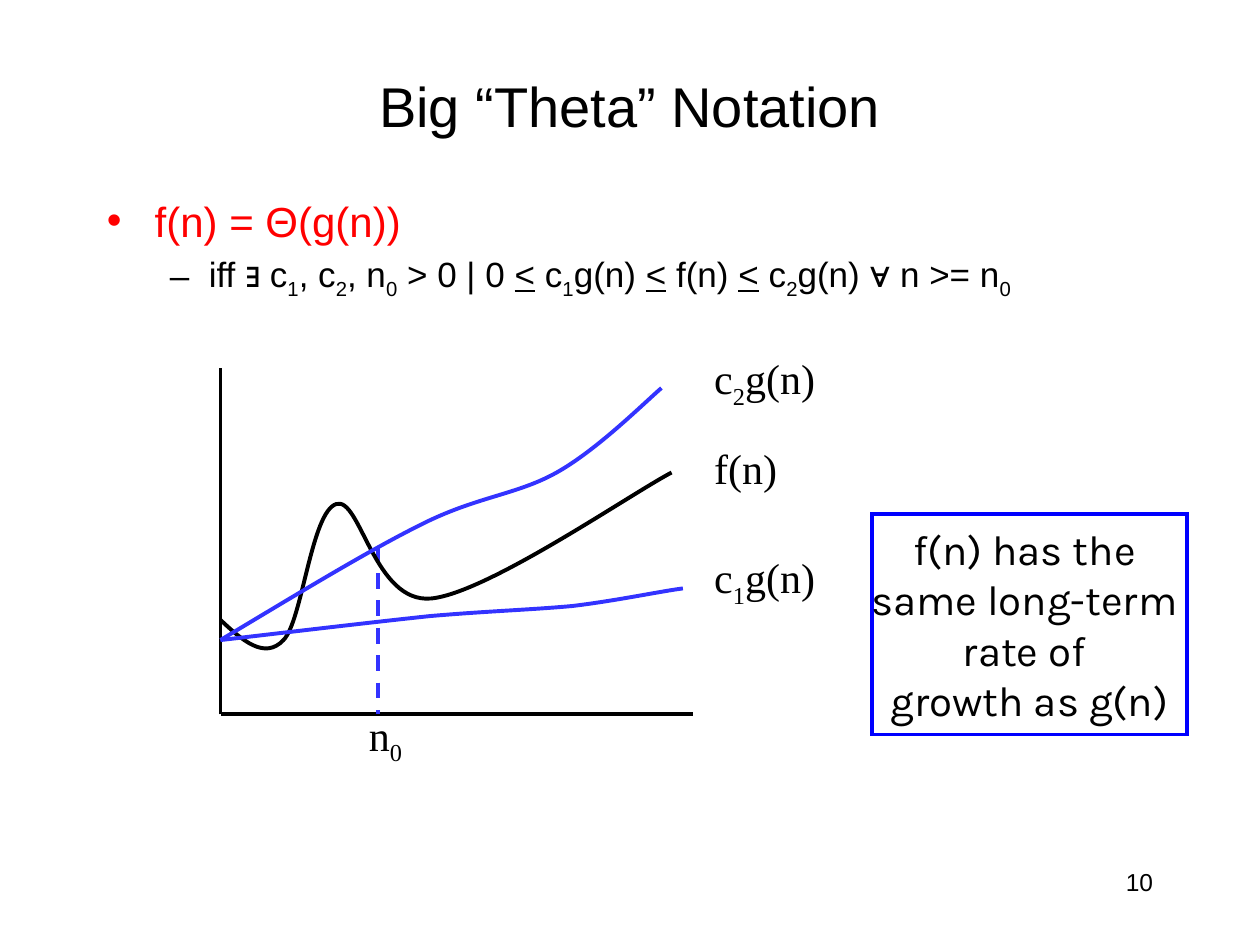
from dataclasses import dataclass

from lxml import etree
from pptx import Presentation
from pptx.dml.color import RGBColor
from pptx.enum.dml import MSO_LINE
from pptx.enum.shapes import MSO_CONNECTOR, MSO_SHAPE
from pptx.enum.text import MSO_ANCHOR, MSO_AUTO_SIZE, PP_ALIGN
from pptx.oxml.ns import qn
from pptx.util import Inches, Pt

LEFT, CENTER, RIGHT = PP_ALIGN.LEFT, PP_ALIGN.CENTER, PP_ALIGN.RIGHT
TOP, MIDDLE = MSO_ANCHOR.TOP, MSO_ANCHOR.MIDDLE
FIT, DASH = MSO_AUTO_SIZE.SHAPE_TO_FIT_TEXT, MSO_LINE.DASH
STRAIGHT, RECT = MSO_CONNECTOR.STRAIGHT, MSO_SHAPE.RECTANGLE

COLORS = {"black": "000000", "red": "FF0000", "curve": "3333FF", "box": "0000FF"}
LINE_WIDTH = 2.25


@dataclass
class Para:
    """Text is split at '/'; a '_' piece is a subscript, a '<' piece is underlined."""
    text: str
    size: float
    font: str = "Arial"
    color: str = "black"
    align: PP_ALIGN = LEFT
    bullet: str = ""
    margin: float = 0
    hang: float = 0


@dataclass
class Axis:
    start: tuple[float, float]
    end: tuple[float, float]
    color: str = "black"
    dashed: bool = False


@dataclass
class Curve:
    """A start point, then two control points and an end point per segment."""
    points: list[tuple[float, float]]
    color: str


def rgb(name: str) -> RGBColor:
    return RGBColor.from_string(COLORS[name])


def style_line(line, color: str) -> None:
    line.color.rgb = rgb(color)
    line.width = Pt(LINE_WIDTH)


def add_bullet(p, para: Para) -> None:
    p.space_before = Pt(para.size * 0.2)
    p_pr = p._p.get_or_add_pPr()
    p_pr.set("marL", str(Inches(para.margin)))
    p_pr.set("indent", str(-Inches(para.hang)))
    etree.SubElement(p_pr, qn("a:buFont"), typeface=para.font)
    etree.SubElement(p_pr, qn("a:buChar"), char=para.bullet)


def fill_text(tf, paras: list[Para], **frame) -> None:
    for name, value in frame.items():
        setattr(tf, name, value)
    for i, para in enumerate(paras):
        p = tf.add_paragraph() if i else tf.paragraphs[0]
        p.alignment = para.align
        if para.bullet:
            add_bullet(p, para)
        for piece in para.text.split("/"):
            r = p.add_run()
            r.text = piece.removeprefix("_")
            r.font.color.rgb = rgb(para.color)
            values = {"name": para.font, "size": Pt(para.size)}
            if piece == "<":
                values["underline"] = True
            for name, value in values.items():
                setattr(r.font, name, value)
            if piece.startswith("_"):
                r._r.get_or_add_rPr().set("baseline", "-25000")


def add_text(s, box: tuple, paras: list[Para], **frame) -> None:
    tb = s.shapes.add_textbox(*map(Inches, box))
    fill_text(tb.text_frame, paras, **{"word_wrap": True, **frame})


def add_axis(s, axis: Axis) -> None:
    c = s.shapes.add_connector(STRAIGHT, *map(Inches, axis.start + axis.end))
    style_line(c.line, axis.color)
    if axis.dashed:
        c.line.dash_style = DASH
    etree.SubElement(c._element.spPr, qn("a:effectLst"))


def add_curve(s, curve: Curve) -> None:
    start, *rest = [(Inches(x), Inches(y)) for x, y in curve.points]
    fb = s.shapes.build_freeform(*start)
    fb.add_line_segments(rest, close=False)
    sp = fb.convert_to_shape()
    # Turn each three line points into one Bezier segment
    path = next(sp._element.iter(qn("a:path")))
    lines = path.findall(qn("a:lnTo"))
    for i in range(0, len(lines), 3):
        segment = etree.SubElement(path, qn("a:cubicBezTo"))
        for line in lines[i:i + 3]:
            segment.append(line[0])
            path.remove(line)
    sp.shadow.inherit = False
    sp.fill.background()
    style_line(sp.line, curve.color)


ORIGIN = (1.75, 5.67)
AXES = [
    Axis(ORIGIN, (5.5, 5.67)),
    Axis(ORIGIN, (1.75, 2.92)),
    Axis((3, 4.33), (3, 5.67), "curve", True),
]
CURVES = [
    # f(n)
    Curve([(1.75, 4.92), (1.92, 5.08), (2.1, 5.24), (2.25, 5.08),
           (2.4, 4.93), (2.47, 4.06), (2.67, 4), (2.86, 3.94), (2.97, 4.79),
           (3.42, 4.75), (3.86, 4.71), (4.99, 3.93), (5.33, 3.75)], "black"),
    # c1 g(n)
    Curve([(1.75, 5.08), (2.35, 5.01), (2.94, 4.94), (3.41, 4.89),
           (3.87, 4.85), (4.21, 4.84), (4.54, 4.81),
           (4.88, 4.77), (5.26, 4.69), (5.42, 4.67)], "curve"),
    # c2 g(n)
    Curve([(1.75, 5.08), (2.32, 4.74), (2.89, 4.39), (3.33, 4.17),
           (3.78, 3.94), (4.1, 3.93), (4.42, 3.75),
           (4.74, 3.57), (5.1, 3.21), (5.25, 3.08)], "curve"),
]
LABELS = [
    ("c/_2/g(n)", 5.57, 2.75, 1.02),
    ("f(n)", 5.57, 3.46, 0.7),
    ("c/_1/g(n)", 5.57, 4.33, 1.02),
    ("n/_0", 2.83, 5.58, 0.48),
]
DEFINITION = ("iff ∃ c/_1/, c/_2/, n/_0/ > 0 | 0 /</ c/_1/g(n) /</ f(n) /</"
              " c/_2/g(n) ∀ n >= n/_0")
SUMMARY = ["f(n) has the ", "same long-term ", "rate of ", "growth as g(n)"]


def main() -> None:
    prs = Presentation()
    prs.slide_width, prs.slide_height = Inches(10), Inches(7.5)
    s = prs.slides.add_slide(prs.slide_layouts[6])

    # Page number, title and definition
    add_text(s, (7.17, 6.83, 2.08, 0.5), [Para("10", 14, align=RIGHT)])
    add_text(s, (0.75, 0.42, 8.5, 0.83),
             [Para("Big “Theta” Notation", 32, align=CENTER)], vertical_anchor=MIDDLE)
    add_text(s, (0.75, 1.5, 8.5, 5.17), [
        Para("f(n) = Θ(g(n))", 24, color="red", bullet="•", margin=0.38, hang=0.38),
        Para(DEFINITION, 20, bullet="–", margin=0.81, hang=0.31),
    ], vertical_anchor=TOP)

    # Growth graph
    for axis in AXES:
        add_axis(s, axis)
    for curve in CURVES:
        add_curve(s, curve)
    for text, left, top, width in LABELS:
        add_text(s, (left, top, width, 0.5), [Para(text, 24, "Times New Roman")],
                 word_wrap=False, auto_size=FIT)

    # Summary box with square corners
    sp = s.shapes.add_shape(RECT, *map(Inches, (6.92, 4.08, 2.5, 1.75)))
    sp.shadow.inherit = False
    sp.fill.background()
    style_line(sp.line, "box")
    etree.SubElement(sp.line._get_or_add_ln(), qn("a:miter"), lim="800000")
    fill_text(sp.text_frame, [Para(t, 24, "Karla", align=CENTER) for t in SUMMARY],
              word_wrap=False, vertical_anchor=MIDDLE)

    prs.save("out.pptx")


if __name__ == "__main__":
    main()
